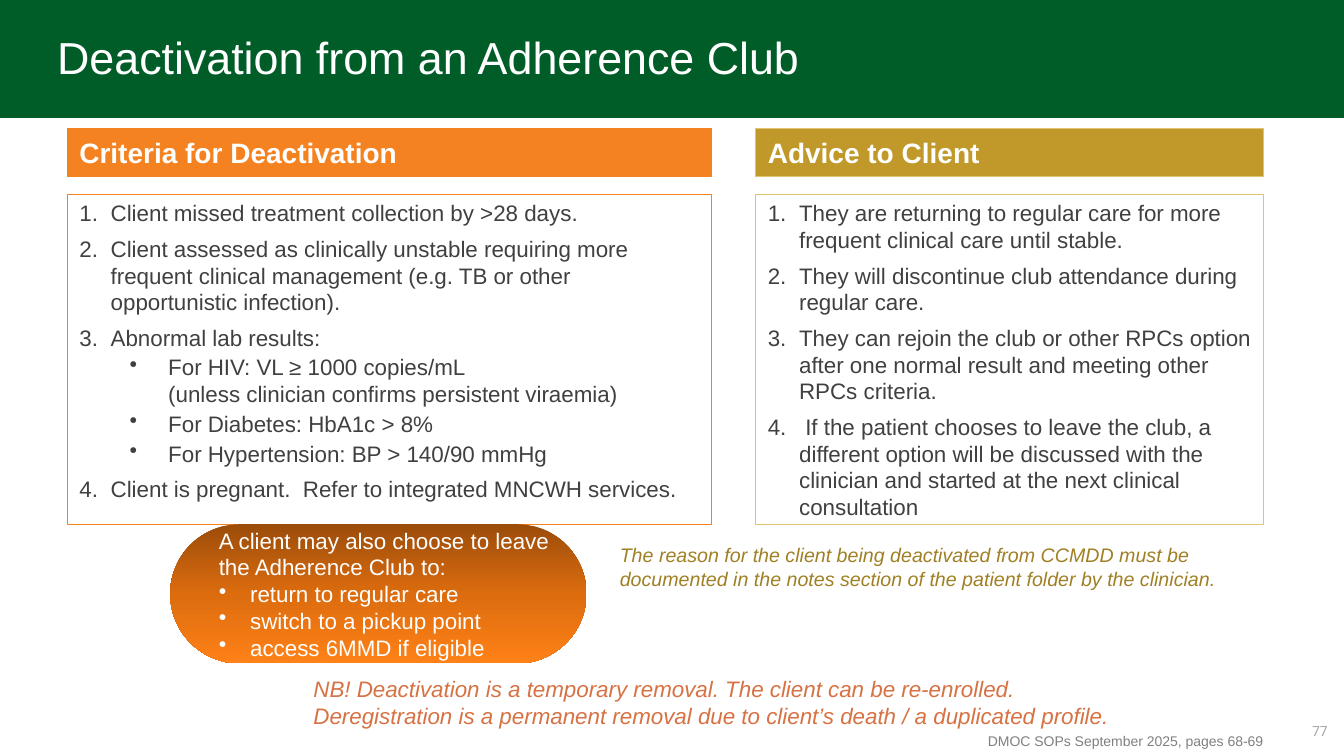
import copy
from dataclasses import dataclass

import lxml.etree
import pptx
import pptx.dml.color
import pptx.enum.shapes
import pptx.enum.text
import pptx.oxml.ns
import pptx.util

Cm, Pt = pptx.util.Cm, pptx.util.Pt
Kind = pptx.enum.shapes.MSO_SHAPE
Align = pptx.enum.text.PP_ALIGN
Anchor = pptx.enum.text.MSO_ANCHOR
Fit = pptx.enum.text.MSO_AUTO_SIZE
qn = pptx.oxml.ns.qn

COLORS = {
    "green": "005D28", "orange": "F58221", "gold": "C0992A", "sand": "DFC36F",
    "white": "FFFFFF", "dark": "404040", "olive": "A08024", "rust": "D67243",
    "gray": "808080", "pale": "A6A6A6",
    "brown": "9B4C0A", "amber": "DC6C0E", "bright": "FF8117",
}


@dataclass
class Font:
    size: int
    color: str
    bold: bool = False
    italic: bool = False
    name: str = "Arial"


@dataclass
class Mark:
    """List style: indent and hang in cm, space before in points."""
    tag: str
    attr: str
    value: str
    left: float
    hang: float
    gap: int
    level: int = 0


@dataclass
class Line:
    text: str
    mark: Mark | None = None


@dataclass
class Box:
    """Place in cm; a box with neither fill nor shape is a plain text box."""
    left: float
    top: float
    width: float
    height: float
    lines: list[Line]
    font: Font | None = None
    fill: str | None = None
    edge: str | None = None
    kind: Kind | None = Kind.RECTANGLE
    pads: tuple[float, float] = (0.25, 0.25)
    anchor: Anchor = Anchor.MIDDLE
    align: Align = Align.LEFT
    grow: bool = False
    space: float | None = None


@dataclass
class Panel:
    left: float
    width: float
    title: str
    fill: str
    edge: str
    lines: list[Line]


NUM = Mark("a:buAutoNum", "type", "arabicPeriod", 0.79, 0.79, 6)
SUB = Mark("a:buChar", "char", "•", 2.24, 0.97, 2, 1)
DOT = Mark("a:buChar", "char", "•", 0.79, 0.79, 0)

PANELS = [
    Panel(19.05, 12.8, "Advice to Client", "gold", "sand", [
        Line("They are returning to regular care for more frequent clinical care until stable.", NUM),
        Line("They will discontinue club attendance during regular care.", NUM),
        Line("They can rejoin the club or other RPCs option after one normal result "
             "and meeting other RPCs criteria.", NUM),
        Line(" If the patient chooses to leave the club, a different option will be discussed "
             "with the clinician and started at the next clinical consultation", NUM),
    ]),
    Panel(1.7, 16.23, "Criteria for Deactivation", "orange", "orange", [
        Line("Client missed treatment collection by >28 days.", NUM),
        Line("Client assessed as clinically unstable requiring more frequent clinical "
             "management (e.g. TB or other opportunistic infection).", NUM),
        Line("Abnormal lab results:", NUM),
        Line("For HIV: VL ≥ 1000 copies/mL\v(unless clinician confirms persistent viraemia)", SUB),
        Line("For Diabetes: HbA1c > 8%", SUB),
        Line("For Hypertension: BP > 140/90 mmHg", SUB),
        Line("Client is pregnant.  Refer to integrated MNCWH services.", NUM),
    ]),
]

BANNER = Box(0, 0, 33.87, 2.97, [], fill="green")
TITLE = Box(1.19, 0.38, 27.64, 2.24, [Line("Deactivation from an Adherence Club")],
            Font(32, "white"), kind=None, space=0.9)
REASON = Box(15.37, 13.51, 16.38, 1.55, [
    Line("The reason for the client being deactivated from CCMDD must be documented "
         "in the notes section of the patient folder by the clinician."),
], Font(14, "olive", italic=True), "white")
PILL = Box(4.29, 13.21, 10.49, 3.51, [
    Line("A client may also choose to leave the Adherence Club to:"),
    Line("return to regular care", DOT),
    Line("switch to a pickup point", DOT),
    Line("access 6MMD if eligible", DOT),
], Font(16, "white"), kind=Kind.ROUNDED_RECTANGLE, pads=(0.71, 0.3))
NUMBER = Box(26.09, 17.91, 7.62, 1.02, [Line("77")], Font(10, "pale", name="Roboto"),
             kind=None, align=Align.RIGHT)
SOURCE = Box(16.08, 18.34, 16, 0.71, [Line("DMOC SOPs September 2025, pages 68-69")],
             Font(10, "gray"), kind=None, anchor=Anchor.TOP, align=Align.RIGHT, grow=True)
NOTE = Box(7.65, 16.89, 21.77, 1.63, [
    Line("NB! Deactivation is a temporary removal. The client can be re-enrolled."),
    Line("Deregistration is a permanent removal due to client’s death / a duplicated profile."),
], Font(16, "rust", italic=True), kind=None, anchor=Anchor.TOP, grow=True)


def rgb(name: str) -> pptx.dml.color.RGBColor:
    return pptx.dml.color.RGBColor.from_string(COLORS[name])


def add_mark(para, mark: Mark, first: bool) -> None:
    para.level = mark.level
    props = para._p.get_or_add_pPr()
    props.set("marL", str(Cm(mark.left)))
    props.set("indent", str(-Cm(mark.hang)))
    if not first:
        para.space_before = Pt(mark.gap)
    lxml.etree.SubElement(props, qn(mark.tag)).set(mark.attr, mark.value)


def add_text(shape, box: Box) -> None:
    frame = shape.text_frame
    frame.word_wrap = True
    frame.auto_size = Fit.SHAPE_TO_FIT_TEXT if box.grow else Fit.NONE
    frame.vertical_anchor = box.anchor
    frame.margin_left, frame.margin_right = map(Cm, box.pads)
    frame.margin_top = frame.margin_bottom = Cm(0.13)
    for i, line in enumerate(box.lines):
        para = frame.add_paragraph() if i else frame.paragraphs[0]
        para.text = line.text
        para.alignment = box.align
        if box.space:
            para.line_spacing = box.space
        if line.mark:
            add_mark(para, line.mark, i == 0)
        font = para.font
        font.name, font.size = box.font.name, Pt(box.font.size)
        font.bold, font.italic = box.font.bold, box.font.italic
        font.color.rgb = rgb(box.font.color)


def add_box(slide, box: Box):
    place = [Cm(n) for n in (box.left, box.top, box.width, box.height)]
    if box.kind is None:
        shape = slide.shapes.add_textbox(*place)
    else:
        shape = slide.shapes.add_shape(box.kind, *place)
        shape.shadow.inherit = False
        if box.fill:
            shape.fill.solid()
            shape.fill.fore_color.rgb = rgb(box.fill)
        if box.edge:
            shape.line.color.rgb = rgb(box.edge)
            shape.line.width = Pt(0.75)
        else:
            shape.line.fill.background()
    add_text(shape, box)
    return shape


def add_panel(slide, panel: Panel) -> None:
    pads = (0.3, 0.25)
    add_box(slide, Box(panel.left, 3.25, panel.width, 1.19, [Line(panel.title)],
                       Font(20, "white", bold=True), panel.fill, panel.edge, pads=pads))
    add_box(slide, Box(panel.left, 4.9, panel.width, 8.31, panel.lines, Font(16, "dark"),
                       "white", panel.edge, pads=pads, anchor=Anchor.TOP))


def shade(shape, names: list[str]) -> None:
    """Fill from top to bottom with evenly spaced colours."""
    fill = shape.fill
    fill.gradient()
    fill.gradient_angle = 270
    stops = shape._element.spPr.find(qn("a:gradFill")).find(qn("a:gsLst"))
    stops.insert(1, copy.deepcopy(stops[0]))
    for i, (stop, name) in enumerate(zip(fill.gradient_stops, names)):
        stop.position = i / (len(names) - 1)
        stop.color.rgb = rgb(name)


def main() -> None:
    deck = pptx.Presentation()
    deck.slide_width, deck.slide_height = Cm(33.87), Cm(19.05)
    slide = deck.slides.add_slide(deck.slide_layouts[6])
    add_box(slide, BANNER)
    add_box(slide, TITLE)
    for panel in PANELS:
        add_panel(slide, panel)
    add_box(slide, REASON)
    pill = add_box(slide, PILL)
    pill.adjustments[0] = 0.5
    shade(pill, ["brown", "amber", "bright"])
    for box in (NUMBER, SOURCE, NOTE):
        add_box(slide, box)
    deck.save("out.pptx")


if __name__ == "__main__":
    main()
